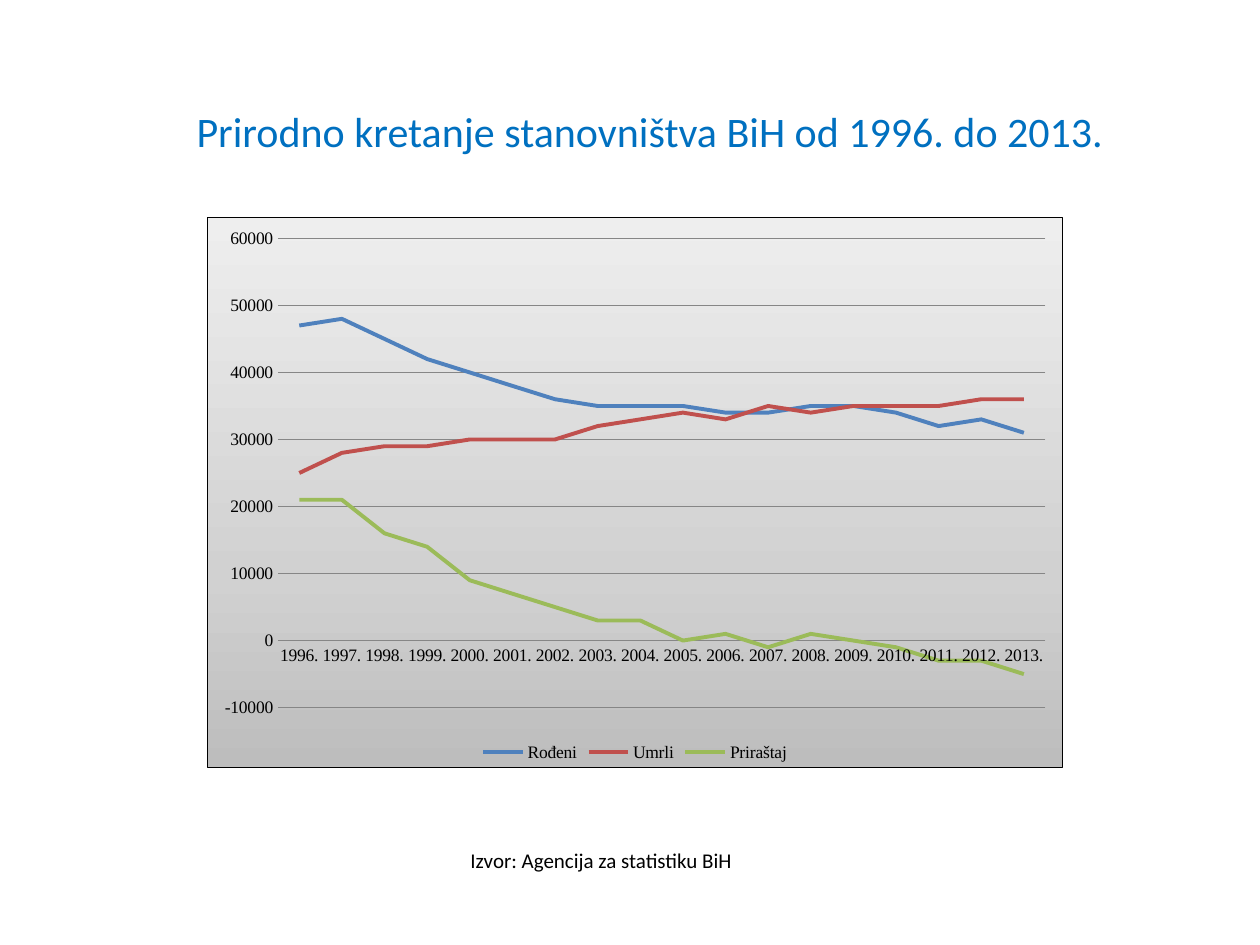
import pptx
import pptx.chart.data
import pptx.dml.color
import pptx.enum.chart
import pptx.enum.text
import pptx.oxml
import pptx.util

PX = 914400 // 126
BLUE = pptx.dml.color.RGBColor(0x00, 0x70, 0xC0)
BLACK = pptx.dml.color.RGBColor(0x00, 0x00, 0x00)
GRAY = pptx.dml.color.RGBColor(0x86, 0x86, 0x86)
BIRTHS_BLUE = pptx.dml.color.RGBColor(0x4F, 0x81, 0xBD)
DEATHS_RED = pptx.dml.color.RGBColor(0xC0, 0x50, 0x4D)
GROWTH_GREEN = pptx.dml.color.RGBColor(0x9B, 0xBB, 0x59)

deck = pptx.Presentation()
deck.slide_width = pptx.util.Inches(10)
deck.slide_height = pptx.util.Inches(7.5)
page = deck.slides.add_slide(deck.slide_layouts[6])


def add_text(text, left, top, width, height, size, color):
    box = page.shapes.add_textbox(left * PX, top * PX, width * PX, height * PX)
    box.text_frame.word_wrap = True
    para = box.text_frame.paragraphs[0]
    para.text = text
    para.font.name = "Calibri"
    para.font.size = pptx.util.Pt(size)
    para.font.color.rgb = color
    return box


# Title
title = add_text("Prirodno kretanje stanovništva BiH od 1996. do 2013.",
                 99, 85, 1102, 92, 24, BLUE)
title.text_frame.vertical_anchor = pptx.enum.text.MSO_ANCHOR.MIDDLE
title.text_frame.paragraphs[0].alignment = pptx.enum.text.PP_ALIGN.CENTER

# Source note
add_text("Izvor: Agencija za statistiku BiH", 458, 841, 344, 38, 12, BLACK)

# Chart data, in thousands of people
trends = [
    ("Rođeni", BIRTHS_BLUE, [47, 48, 45, 42, 40, 38, 36, 35, 35,
                             35, 34, 34, 35, 35, 34, 32, 33, 31]),
    ("Umrli", DEATHS_RED, [25, 28, 29, 29, 30, 30, 30, 32, 33,
                           34, 33, 35, 34, 35, 35, 35, 36, 36]),
    ("Priraštaj", GROWTH_GREEN, [21, 21, 16, 14, 9, 7, 5, 3, 3,
                                 0, 1, -1, 1, 0, -1, -3, -3, -5]),
]
data = pptx.chart.data.CategoryChartData()
data.categories = [f"{year}." for year in range(1996, 2014)]
for name, color, thousands in trends:
    data.add_series(name, [value * 1000 for value in thousands])

# Line chart
chart = page.shapes.add_chart(
    pptx.enum.chart.XL_CHART_TYPE.LINE,
    207 * PX, 217 * PX, 856 * PX, 551 * PX, data).chart
chart.has_title = False
chart.font.name = "Times New Roman"
chart.font.size = pptx.util.Pt(10)
chart.font.color.rgb = BLACK
chart.has_legend = True
chart.legend.position = pptx.enum.chart.XL_LEGEND_POSITION.BOTTOM
chart.legend.include_in_layout = False

for series, (name, color, thousands) in zip(chart.plots[0].series, trends):
    series.smooth = False
    series.marker.style = pptx.enum.chart.XL_MARKER_STYLE.NONE
    series.format.line.color.rgb = color
    series.format.line.width = pptx.util.Pt(2.25)

# Axes
years, people = chart.category_axis, chart.value_axis
for axis in (years, people):
    axis.major_tick_mark = pptx.enum.chart.XL_TICK_MARK.NONE
    axis.minor_tick_mark = pptx.enum.chart.XL_TICK_MARK.NONE
people.minimum_scale = -10000
people.maximum_scale = 60000
people.major_unit = 10000
people.has_major_gridlines = True
people.format.line.fill.background()
for line in (years.format.line, people.major_gridlines.format.line):
    line.color.rgb = GRAY
    line.width = pptx.util.Pt(0.75)

# Chart background gradient and border
stops = "".join(
    f'<a:gs pos="{percent * 1000}"><a:srgbClr val="{shade}"/></a:gs>'
    for percent, shade in ((0, "BDBDBD"), (35, "D1D1D1"), (100, "EEEEEE")))
background = pptx.oxml.parse_xml(
    '<c:spPr xmlns:c="http://schemas.openxmlformats.org/drawingml/2006/chart"'
    ' xmlns:a="http://schemas.openxmlformats.org/drawingml/2006/main">'
    f'<a:gradFill><a:gsLst>{stops}</a:gsLst><a:lin ang="16200000"/></a:gradFill>'
    '<a:ln w="9525"><a:solidFill><a:srgbClr val="000000"/></a:solidFill></a:ln>'
    '</c:spPr>')
chart.element.chart.addnext(background)

deck.save("out.pptx")
